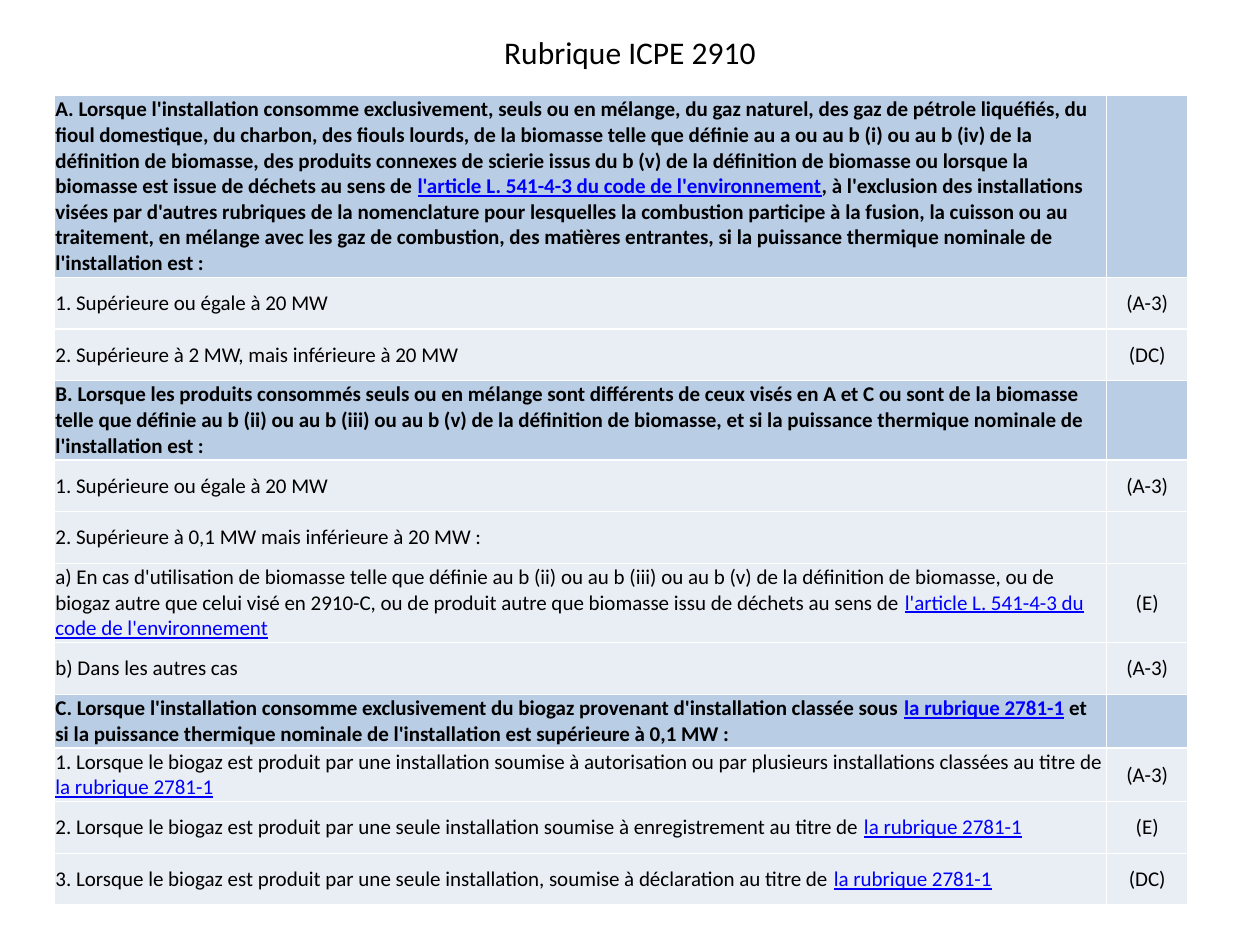
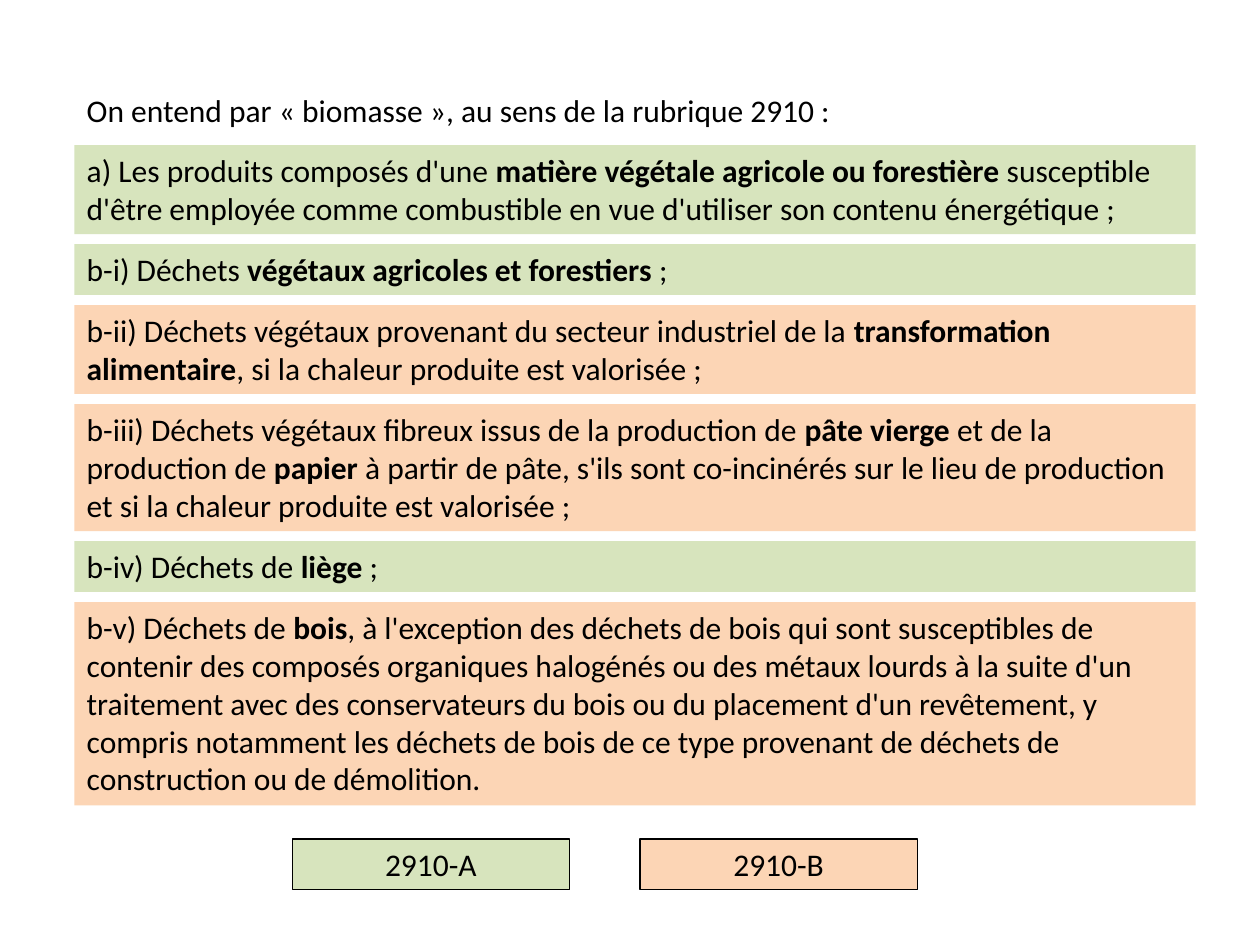
import pptx
import pptx.dml.color
import pptx.enum.shapes
import pptx.enum.text
import pptx.util

Inches = pptx.util.Inches
Pt = pptx.util.Pt
RGBColor = pptx.dml.color.RGBColor
ALIGN = pptx.enum.text.PP_ALIGN
ANCHOR = pptx.enum.text.MSO_ANCHOR

FONT = "Calibri"
BLACK = RGBColor(0x00, 0x00, 0x00)
LINK_BLUE = RGBColor(0x00, 0x00, 0xFF)
HEADING_BLUE = RGBColor(0xB9, 0xCD, 0xE5)
ROW_BLUE = RGBColor(0xE9, 0xED, 0xF4)
GREEN = RGBColor(0xD7, 0xE4, 0xBD)
ORANGE = RGBColor(0xFC, 0xD5, 0xB5)

# Asterisks enclose the emphasised words: links in the table, bold in the boxes.
TITLE = "Rubrique ICPE 2910"
SECTIONS = [
    ("A. Lorsque l'installation consomme exclusivement, seuls ou en mélange, du gaz naturel, "
     "des gaz de pétrole liquéfiés, du fioul domestique, du charbon, des fiouls lourds, de la "
     "biomasse telle que définie au a ou au b (i) ou au b (iv) de la définition de biomasse, "
     "des produits connexes de scierie issus du b (v) de la définition de biomasse ou lorsque "
     "la biomasse est issue de déchets au sens de "
     "*l'article L. 541-4-3 du code de l'environnement*, à l'exclusion des installations "
     "visées par d'autres rubriques de la nomenclature pour lesquelles la combustion participe "
     "à la fusion, la cuisson ou au traitement, en mélange avec les gaz de combustion, des "
     "matières entrantes, si la puissance thermique nominale de l'installation est :",
     [("1. Supérieure ou égale à 20 MW", "(A-3)"),
      ("2. Supérieure à 2 MW, mais inférieure à 20 MW", "(DC)")]),
    ("B. Lorsque les produits consommés seuls ou en mélange sont différents de ceux visés en A "
     "et C ou sont de la biomasse telle que définie au b (ii) ou au b (iii) ou au b (v) de la "
     "définition de biomasse, et si la puissance thermique nominale de l'installation est :",
     [("1. Supérieure ou égale à 20 MW", "(A-3)"),
      ("2. Supérieure à 0,1 MW mais inférieure à 20 MW :", ""),
      ("a) En cas d'utilisation de biomasse telle que définie au b (ii) ou au b (iii) ou au "
       "b (v) de la définition de biomasse, ou de biogaz autre que celui visé en 2910-C, ou de "
       "produit autre que biomasse issu de déchets au sens de "
       "*l'article L. 541-4-3 du code de l'environnement*", "(E)"),
      ("b) Dans les autres cas", "(A-3)")]),
    ("C. Lorsque l'installation consomme exclusivement du biogaz provenant d'installation "
     "classée sous *la rubrique 2781-1* et si la puissance thermique nominale de "
     "l'installation est supérieure à 0,1 MW :",
     [("1. Lorsque le biogaz est produit par une installation soumise à autorisation ou par "
       "plusieurs installations classées au titre de *la rubrique 2781-1*", "(A-3)"),
      ("2. Lorsque le biogaz est produit par une seule installation soumise à enregistrement "
       "au titre de *la rubrique 2781-1*", "(E)"),
      ("3. Lorsque le biogaz est produit par une seule installation, soumise à déclaration au "
       "titre de *la rubrique 2781-1*", "(DC)")]),
]
# Text, fill and number of lines, from top to bottom
DEFINITIONS = [
    ("On entend par « biomasse », au sens de la rubrique 2910 :", None, 1),
    ("a) Les produits composés d'une *matière végétale agricole ou forestière* susceptible "
     "d'être employée comme combustible en vue d'utiliser son contenu énergétique ;", GREEN, 2),
    ("b-i) Déchets *végétaux agricoles et forestiers* ;", GREEN, 1),
    ("b-ii) Déchets végétaux provenant du secteur industriel de la *transformation "
     "alimentaire*, si la chaleur produite est valorisée ;", ORANGE, 2),
    ("b-iii) Déchets végétaux fibreux issus de la production de *pâte vierge* et de la "
     "production de *papier* à partir de pâte, s'ils sont co-incinérés sur le lieu de "
     "production et si la chaleur produite est valorisée ;", ORANGE, 3),
    ("b-iv) Déchets de *liège* ;", GREEN, 1),
    ("b-v) Déchets de *bois*, à l'exception des déchets de bois qui sont susceptibles de "
     "contenir des composés organiques halogénés ou des métaux lourds à la suite d'un "
     "traitement avec des conservateurs du bois ou du placement d'un revêtement, y compris "
     "notamment les déchets de bois de ce type provenant de déchets de construction ou de "
     "démolition.", ORANGE, 5),
]
LEGEND = [("2910-A", GREEN), ("2910-B", ORANGE)]

COLUMN_WIDTHS = [Inches(8.35), Inches(0.65)]
ROW_HEIGHT = Inches(0.41)
CELL_MARGIN = Inches(0.01)
BOX_LEFT, BOX_WIDTH = Inches(0.59), Inches(8.9)
BOX_TOP, BOX_GAP = Inches(0.67), Inches(0.08)
LINE_HEIGHT, BOX_PADDING = Pt(21.8), Inches(0.1)
LEGEND_LEFT, LEGEND_TOP = Inches(2.32), Inches(6.66)
LEGEND_WIDTH, LEGEND_STEP = Inches(2.2), Inches(2.76)


def write(frame, text, size, align=ALIGN.LEFT, bold=False, links=False):
    """Write text run by run; words between asterisks become links or bold."""
    para = frame.paragraphs[0]
    para.alignment = align
    para.font.size = Pt(size)
    for index, part in enumerate(text.split("*")):
        if not part:
            continue
        marked = index % 2 == 1
        span = para.add_run()
        span.text = part
        span.font.name = FONT
        span.font.size = Pt(size)
        span.font.bold = bold or (marked and not links)
        span.font.underline = marked and links
        span.font.color.rgb = LINK_BLUE if marked and links else BLACK


def fill_cell(cell, text, color, align, bold):
    cell.fill.solid()
    cell.fill.fore_color.rgb = color
    cell.vertical_anchor = ANCHOR.MIDDLE
    cell.margin_left = cell.margin_right = CELL_MARGIN
    cell.margin_top = cell.margin_bottom = CELL_MARGIN
    write(cell.text_frame, text, 12, align, bold, links=True)


def add_box(page, left, top, width, lines, text, color, align=ALIGN.LEFT, outlined=False):
    """Add a box as tall as its lines and return its height."""
    height = BOX_PADDING + lines * LINE_HEIGHT
    if color is None:
        box = page.shapes.add_textbox(left, top, width, height)
    else:
        box = page.shapes.add_shape(
            pptx.enum.shapes.MSO_SHAPE.RECTANGLE, left, top, width, height)
        box.shadow.inherit = False
        box.fill.solid()
        box.fill.fore_color.rgb = color
        if outlined:
            box.line.color.rgb = BLACK
            box.line.width = Pt(0.75)
        else:
            box.line.fill.background()
    frame = box.text_frame
    frame.word_wrap = True
    frame.auto_size = pptx.enum.text.MSO_AUTO_SIZE.SHAPE_TO_FIT_TEXT
    frame.vertical_anchor = ANCHOR.TOP
    write(frame, text, 18, align)
    return height


def build_rubric(deck):
    page = deck.slides.add_slide(deck.slide_layouts.get_by_name("Title Only"))
    title = page.shapes.title
    title.left, title.top = Inches(0.5), Inches(0.22)
    title.width, title.height = Inches(9), Inches(0.38)
    title.text_frame.vertical_anchor = ANCHOR.MIDDLE
    write(title.text_frame, TITLE, 18, ALIGN.CENTER)

    rows = []
    for heading, cases in SECTIONS:
        rows.append((heading, "", True))
        rows.extend((case, regime, False) for case, regime in cases)
    table = page.shapes.add_table(
        len(rows), len(COLUMN_WIDTHS), Inches(0.43), Inches(0.76),
        sum(COLUMN_WIDTHS), ROW_HEIGHT * len(rows)).table
    table.first_row = table.horz_banding = False
    for column, width in zip(table.columns, COLUMN_WIDTHS):
        column.width = width
    for index, (text, regime, is_heading) in enumerate(rows):
        table.rows[index].height = ROW_HEIGHT
        color = HEADING_BLUE if is_heading else ROW_BLUE
        fill_cell(table.cell(index, 0), text, color, ALIGN.LEFT, is_heading)
        fill_cell(table.cell(index, 1), regime, color, ALIGN.CENTER, is_heading)


def build_definitions(deck):
    page = deck.slides.add_slide(deck.slide_layouts.get_by_name("Blank"))
    top = BOX_TOP
    for text, color, lines in DEFINITIONS:
        top += add_box(page, BOX_LEFT, top, BOX_WIDTH, lines, text, color) + BOX_GAP
    for index, (label, color) in enumerate(LEGEND):
        add_box(page, LEGEND_LEFT + index * LEGEND_STEP, LEGEND_TOP, LEGEND_WIDTH, 1,
                label, color, ALIGN.CENTER, outlined=True)


def main():
    deck = pptx.Presentation()
    deck.slide_width, deck.slide_height = Inches(10), Inches(7.5)
    build_rubric(deck)
    build_definitions(deck)
    deck.save("out.pptx")


if __name__ == "__main__":
    main()
